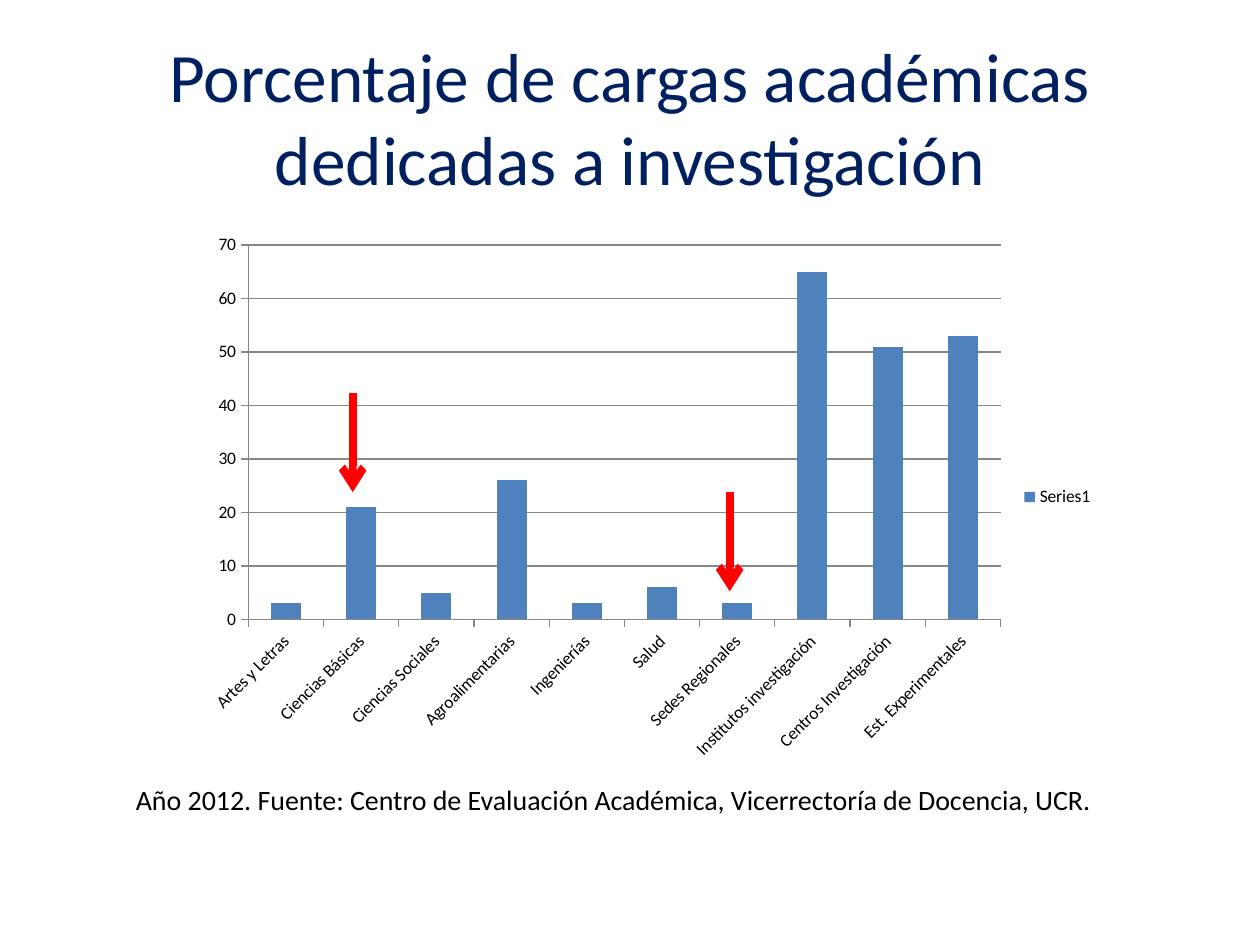
"""Build a slide charting the share of academic workload devoted to research."""
import lxml.etree
import pptx
import pptx.chart.data
import pptx.dml.color
import pptx.enum.chart
import pptx.enum.shapes
import pptx.enum.text
import pptx.oxml.ns
import pptx.util

Cm = pptx.util.Cm
Pt = pptx.util.Pt
qn = pptx.oxml.ns.qn

FONT = "Calibri"
COLOURS = {"title": "002060", "text": "000000", "bar": "4F81BD",
           "axis": "878787", "arrow": "FF0000"}
TITLE = "Porcentaje de cargas académicas dedicadas a investigación"
SOURCE = ("Año 2012. Fuente: Centro de Evaluación Académica, "
          "Vicerrectoría de Docencia, UCR.")
SERIES = "Series1"
WORKLOADS = [
    ("Artes y Letras", 3),
    ("Ciencias Básicas", 21),
    ("Ciencias Sociales", 5),
    ("Agroalimentarias", 26),
    ("Ingenierías", 3),
    ("Salud", 6),
    ("Sedes Regionales", 3),
    ("Institutos investigación", 65),
    ("Centros Investigación", 51),
    ("Est. Experimentales", 53),
]
ARROW_STARTS = [(7.11, 7.92), (14.71, 9.92)]
ARROW_LENGTH = 2


def colour(name):
    return pptx.dml.color.RGBColor.from_string(COLOURS[name])


def add_text(page, text, *, place, size, ink, align="LEFT", anchor="TOP", wrap=True):
    box = page.shapes.add_textbox(*map(Cm, place))
    frame = box.text_frame
    frame.word_wrap = wrap
    frame.vertical_anchor = pptx.enum.text.MSO_ANCHOR[anchor]
    para = frame.paragraphs[0]
    para.alignment = pptx.enum.text.PP_ALIGN[align]
    span = para.add_run()
    span.text = text
    span.font.name = FONT
    span.font.size = Pt(size)
    span.font.color.rgb = colour(ink)


def add_workload_chart(page):
    table = pptx.chart.data.CategoryChartData()
    table.categories = [name for name, share in WORKLOADS]
    table.add_series(SERIES, [share for name, share in WORKLOADS])
    chart = page.shapes.add_chart(
        pptx.enum.chart.XL_CHART_TYPE.COLUMN_CLUSTERED,
        Cm(3.91), Cm(4.52), Cm(18.39), Cm(11), table).chart
    chart.has_title = False
    chart.font.name = FONT
    chart.font.size = Pt(10)
    chart.font.color.rgb = colour("text")
    chart.has_legend = True
    chart.legend.position = pptx.enum.chart.XL_LEGEND_POSITION.RIGHT
    chart.legend.include_in_layout = False

    plot = chart.plots[0]
    plot.gap_width = 150
    plot.vary_by_categories = False
    fill = plot.series[0].format.fill
    fill.solid()
    fill.fore_color.rgb = colour("bar")

    values = chart.value_axis
    values.minimum_scale, values.maximum_scale, values.major_unit = 0, 70, 10
    values.has_major_gridlines = True
    for axis in (values, chart.category_axis):
        axis.major_tick_mark = pptx.enum.chart.XL_TICK_MARK.OUTSIDE
        axis.tick_labels.font.size = Pt(10)
    for part in (values, values.major_gridlines, chart.category_axis):
        part.format.line.color.rgb = colour("axis")
        part.format.line.width = Pt(0.75)
    labels = chart.category_axis.format.line
    labels.width = Pt(0.75)
    body = chart._chartSpace.find(".//" + qn("c:catAx")).find(
        qn("c:txPr") + "/" + qn("a:bodyPr"))
    body.set("rot", "-2700000")
    body.set("vert", "horz")


def add_arrow(page, left, top):
    arrow = page.shapes.add_connector(
        pptx.enum.shapes.MSO_CONNECTOR.STRAIGHT,
        Cm(left), Cm(top), Cm(left), Cm(top + ARROW_LENGTH))
    arrow.line.color.rgb = colour("arrow")
    arrow.line.width = Pt(4.5)
    lxml.etree.SubElement(arrow.line._get_or_add_ln(), qn("a:tailEnd"), type="arrow")
    lxml.etree.SubElement(arrow._element.spPr, qn("a:effectLst"))


def main():
    deck = pptx.Presentation()
    deck.slide_width, deck.slide_height = Cm(25.4), Cm(19.05)
    page = deck.slides.add_slide(deck.slide_layouts[6])
    add_text(page, TITLE, place=(1.27, 0.76, 22.86, 3.18), size=39.6,
             ink="title", align="CENTER", anchor="MIDDLE")
    add_workload_chart(page)
    add_text(page, SOURCE, place=(2.49, 15.65, 20.02, 0.94), size=16,
             ink="text", wrap=False)
    for left, top in ARROW_STARTS:
        add_arrow(page, left, top)
    deck.save("out.pptx")


if __name__ == "__main__":
    main()
